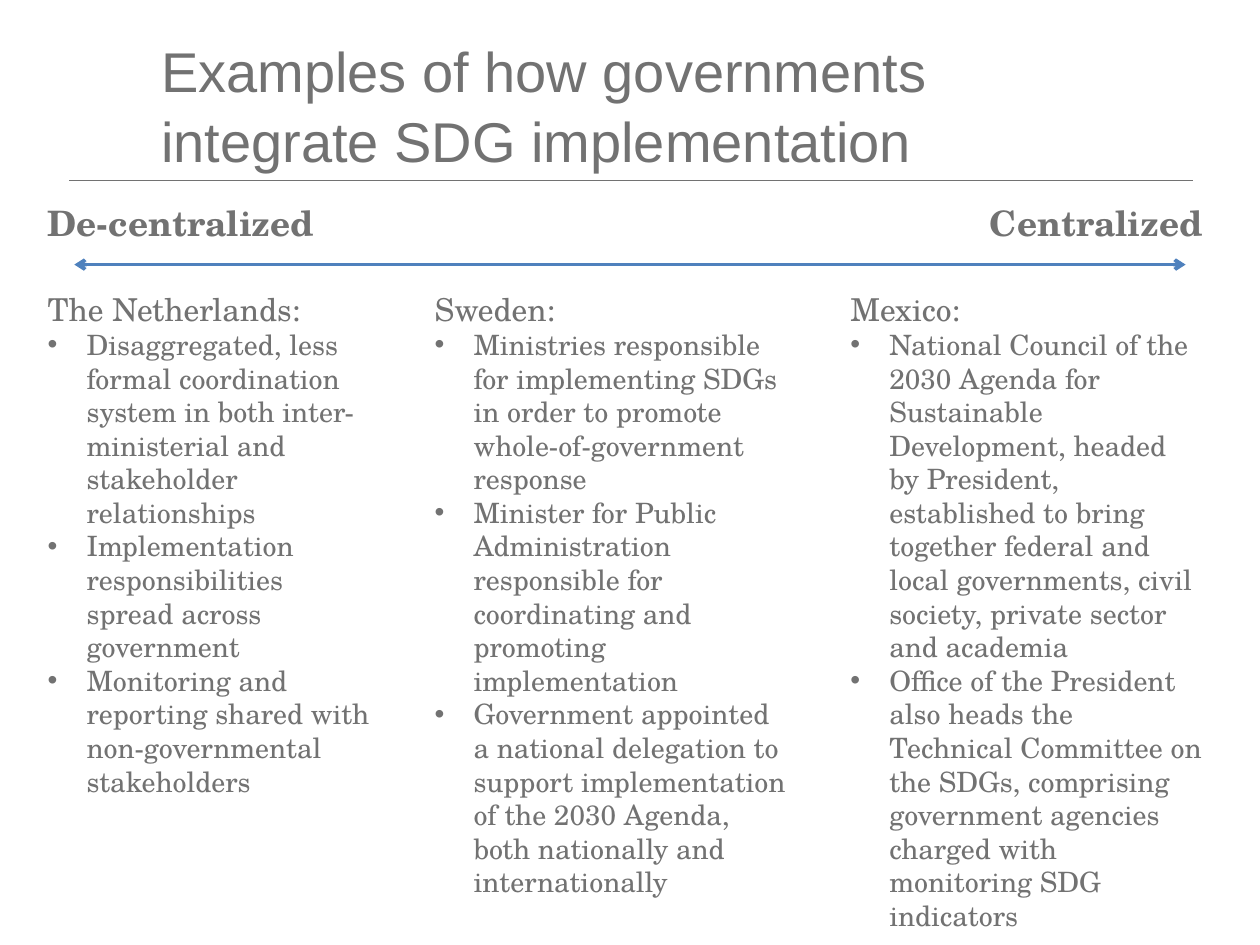
from dataclasses import dataclass
from pptx import Presentation
from pptx.dml.color import RGBColor as RGB
from pptx.enum.shapes import MSO_CONNECTOR as Link
from pptx.enum.text import MSO_ANCHOR as Anchor, PP_ALIGN as Align
from pptx.oxml.ns import qn
from pptx.util import Inches as In, Pt
from lxml.etree import SubElement as Sub


@dataclass(frozen=True)
class Theme:
    grey: RGB = RGB(0x72, 0x72, 0x72)
    blue: RGB = RGB(0x4F, 0x81, 0xBD)
    sans: str = "Arial"
    serif: str = "TeX Gyre Schola"
    title: int = 32
    label: int = 20
    head: int = 18
    body: int = 16


look = Theme()
deck = Presentation()
deck.slide_width, deck.slide_height = In(10), In(7.5)
slide = deck.slides.add_slide(deck.slide_layouts[6])


def write(box, lines, size, font=look.serif, bold=False):
    """Fill a box: first line at the given size, the rest as bullets."""
    frame = box.text_frame
    frame.word_wrap = True
    frame.text = "\n".join(lines)
    for n, para in enumerate(frame.paragraphs):
        if n:
            props = para._p.get_or_add_pPr()
            props.set("marL", str(In(0.31)))
            props.set("indent", str(-In(0.31)))
            Sub(props, qn("a:buFont"), typeface="Arial")
            Sub(props, qn("a:buChar"), char="•")
        for run in para.runs:
            run.font.name = font
            run.font.size = Pt(look.body if n else size)
            run.font.bold = bold
            run.font.color.rgb = look.grey
    return frame


def rule(left, right, top, color, width):
    """Draw a level line."""
    line = slide.shapes.add_connector(
        Link.STRAIGHT, In(left), In(top), In(right), In(top))
    line.line.color.rgb = color
    line.line.width = Pt(width)
    Sub(line._element.spPr, qn("a:effectLst"))
    return line


# Title and the rule below it
rule(0.55, 9.47, 1.43, look.grey, 0.5)
box = slide.shapes.add_textbox(In(1.18), In(0.26), In(8.07), In(1.12))
frame = write(box, ["Examples of how governments integrate SDG implementation"],
              look.title, look.sans)
frame.vertical_anchor = Anchor.MIDDLE
frame.paragraphs[0].line_spacing = 1.04

# Scale from one end to the other
scale = rule(0.59, 9.41, 2.1, look.blue, 2)
for end in ("a:headEnd", "a:tailEnd"):
    Sub(scale.line._get_or_add_ln(), qn(end), type="arrow")

ends = [("De-centralized", 0.28, 2.52, Align.LEFT),
        ("Centralized", 7.52, 2.13, Align.RIGHT)]
for text, left, width, side in ends:
    box = slide.shapes.add_textbox(In(left), In(1.55), In(width), In(0.44))
    frame = write(box, [text], look.label, bold=True)
    frame.paragraphs[0].alignment = side

# One column for each country
lands = [
    (0.28, 2.76, 3.9, [
        "The Netherlands:",
        "Disaggregated, less formal coordination system in both "
        "inter-ministerial and stakeholder relationships",
        "Implementation responsibilities spread across government",
        "Monitoring and reporting shared with non-governmental stakeholders"]),
    (3.35, 2.99, 4.98, [
        "Sweden:",
        "Ministries responsible for implementing SDGs in order to promote "
        "whole-of-government response",
        "Minister for Public Administration responsible for coordinating and "
        "promoting implementation",
        "Government appointed a national delegation to support implementation "
        "of the 2030 Agenda, both nationally and internationally"]),
    (6.65, 2.99, 4.71, [
        "Mexico:",
        "National Council of the 2030 Agenda for Sustainable Development, "
        "headed by President, established to bring together federal and local "
        "governments, civil society, private sector and academia",
        "Office of the President also heads the Technical Committee on the "
        "SDGs, comprising government agencies charged with monitoring SDG "
        "indicators"]),
]
for left, width, height, lines in lands:
    box = slide.shapes.add_textbox(In(left), In(2.25), In(width), In(height))
    write(box, lines, look.head)

deck.save("out.pptx")
